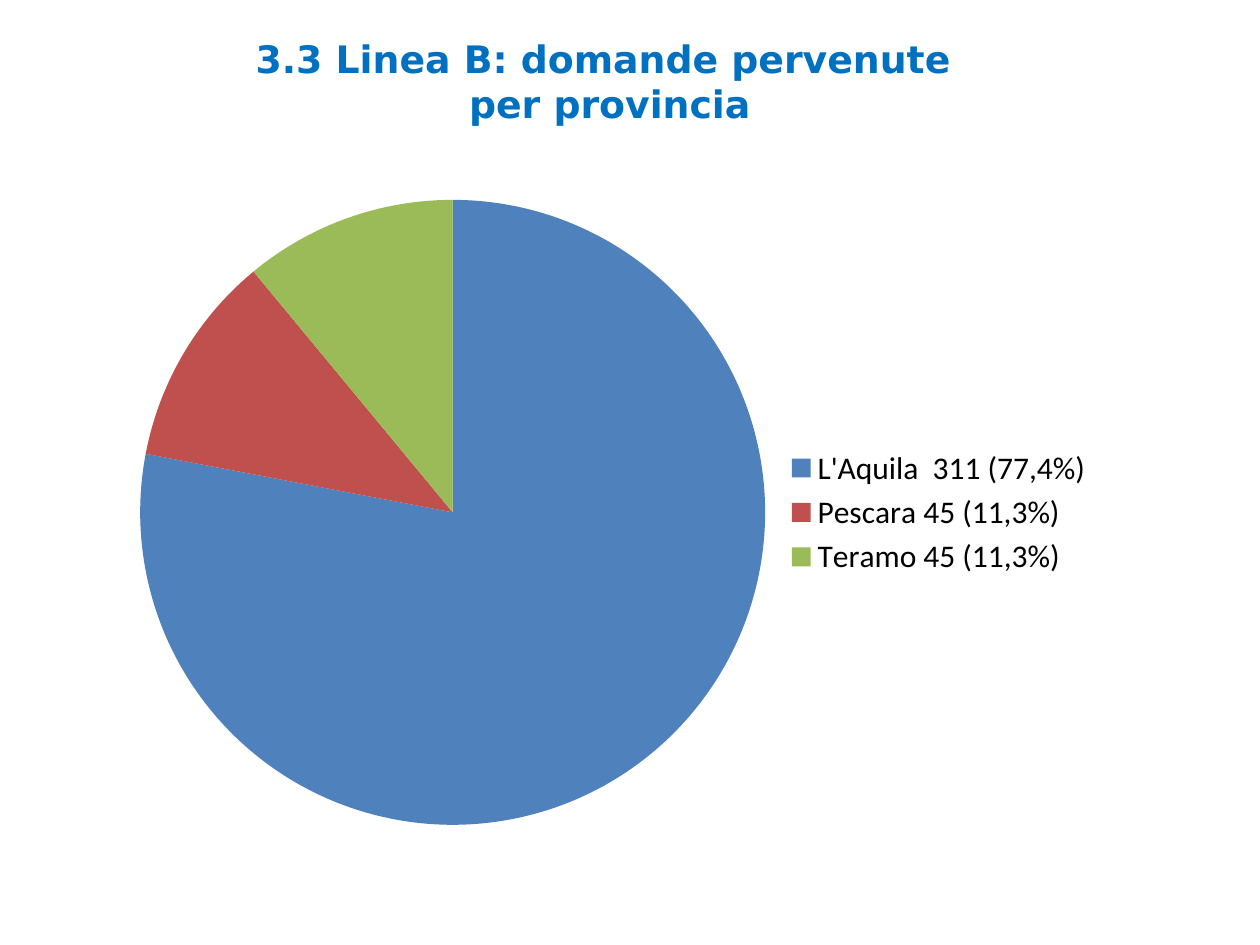
from lxml import etree
from pptx import Presentation
from pptx import util as u
from pptx.chart import data as cd
from pptx.dml.color import RGBColor
from pptx.enum import chart as ch, text as tx
from pptx.oxml import ns

SHARES = [
    ("L'Aquila  311 (77,4%)", 78, "4F81BD"),
    ("Pescara 45 (11,3%)", 11, "C0504D"),
    ("Teramo 45 (11,3%)", 11, "9BBB59"),
]


def paint(color, code):
    color.rgb = RGBColor.from_string(code)


def add_title(slide, box, words):
    frame = slide.shapes.add_textbox(*box).text_frame
    frame.word_wrap = True
    frame.vertical_anchor = tx.MSO_ANCHOR.MIDDLE
    para = frame.paragraphs[0]
    para.text = words
    para.alignment = tx.PP_ALIGN.CENTER
    for run in para.runs:
        run.font.name = "DejaVu Sans"
        run.font.size = u.Pt(21.6)
        run.font.bold = True
        paint(run.font.color, "0070C0")


def set_plot(chart, **edges):
    """Fix the inner plot area, as fractions of the chart box."""
    area = chart._chartSpace.chart.plotArea
    for old in area.findall(ns.qn("c:layout")):
        area.remove(old)
    layout = etree.Element(ns.qn("c:layout"))
    manual = etree.SubElement(layout, ns.qn("c:manualLayout"))
    rules = {"layoutTarget": "inner", "xMode": "edge", "yMode": "edge", **edges}
    for tag, val in rules.items():
        etree.SubElement(manual, ns.qn("c:" + tag)).set("val", str(val))
    area.insert(0, layout)


def add_pie(slide, box, shares):
    data = cd.CategoryChartData()
    data.categories = [name for name, _, _ in shares]
    data.add_series("Series 1", [val for _, val, _ in shares])
    chart = slide.shapes.add_chart(ch.XL_CHART_TYPE.PIE, *box, data).chart
    chart.has_title = False
    chart.font.name = "Calibri"
    chart.font.size = u.Pt(18)
    paint(chart.font.color, "000000")

    # Slices
    plot = chart.plots[0]
    plot.vary_by_categories = True
    for i, (_, _, code) in enumerate(shares):
        form = plot.series[0].points[i].format
        form.fill.solid()
        paint(form.fill.fore_color, code)
        form.line.fill.background()

    # Legend beside the pie
    chart.has_legend = True
    chart.legend.position = ch.XL_LEGEND_POSITION.RIGHT
    chart.legend.include_in_layout = False
    set_plot(chart, x=0.01, y=0.05, w=0.65, h=0.9)


def main():
    deck = Presentation()
    deck.slide_width, deck.slide_height = u.Cm(25.4), u.Cm(19.05)
    slide = deck.slides.add_slide(deck.slide_layouts[6])
    add_title(slide, [u.Cm(n) for n in (1.5, 0.53, 21.59, 2.21)],
              "3.3 Linea B: domande pervenute \vper provincia")
    add_pie(slide, [u.Cm(n) for n in (2.49, 3.33, 19.81, 14)], SHARES)
    deck.save("out.pptx")


if __name__ == "__main__":
    main()
